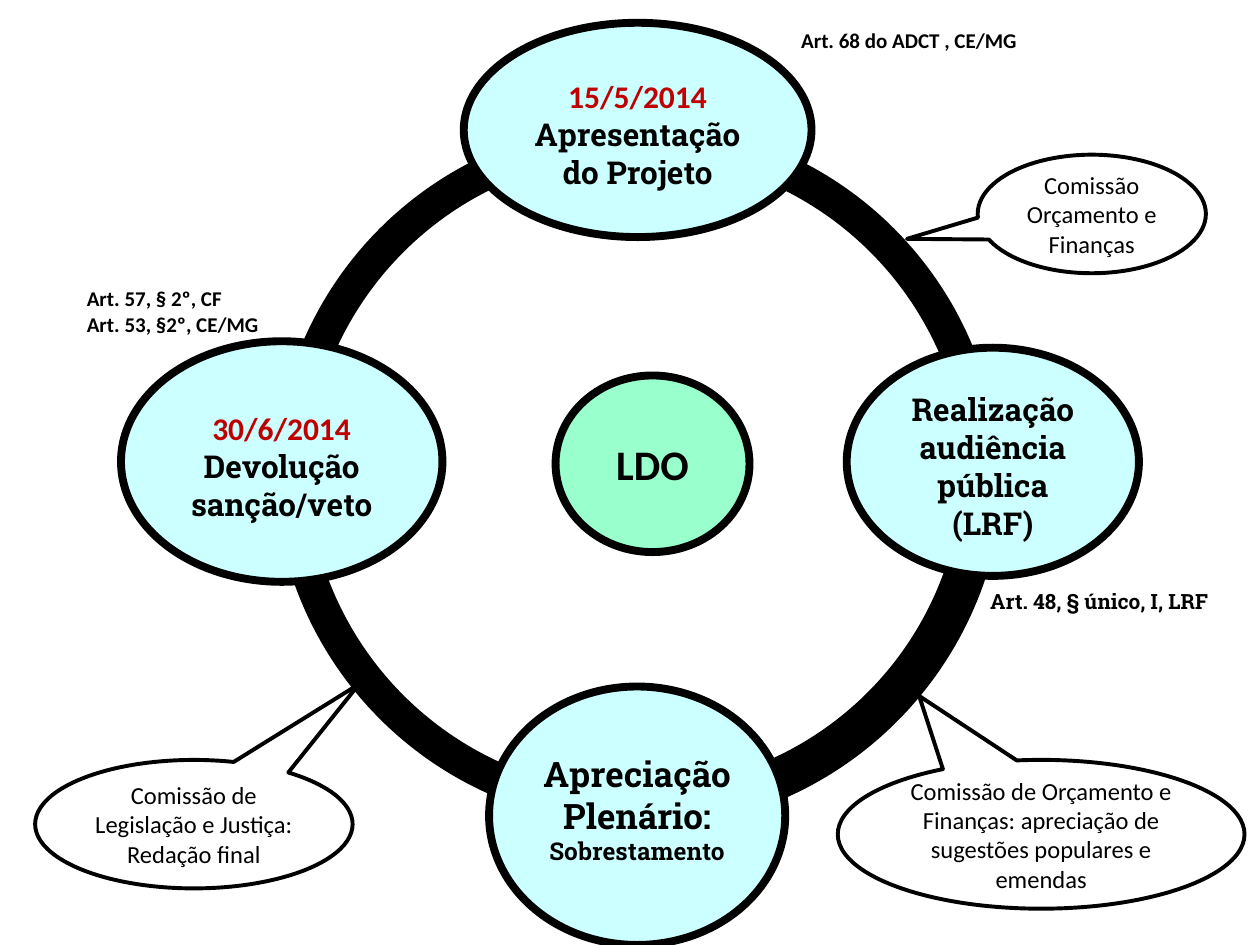
from pptx import Presentation
from pptx.dml.color import RGBColor
from pptx.enum.shapes import MSO_SHAPE as Kind
from pptx.enum.text import MSO_ANCHOR as Anchor, PP_ALIGN as Align
from pptx.util import Cm, Pt

SANS, SLAB = "Calibri", "Roboto Slab"
BLACK, WHITE, RED = "000000", "FFFFFF", "C00000"
AQUA, MINT = "CCFFFF", "99FFCC"


def color(code):
    return RGBColor.from_string(code)


def turn(deg):
    """Convert degrees to the scale of an arc's angle adjustments."""
    return deg * 0.6


class Board:
    """Holds the line style and the slide being drawn."""

    thick, thin = 4.5, 2.25

    def __init__(self, slide):
        self.shapes = slide.shapes

    def shape(self, kind, box, fill, line=None):
        item = self.shapes.add_shape(kind, *map(Cm, box))
        item.shadow.inherit = False
        item.fill.solid()
        item.fill.fore_color.rgb = color(fill)
        if line:
            item.line.color.rgb = color(BLACK)
            item.line.width = Pt(line)
        else:
            item.line.fill.background()
        return item

    def label(self, item, lines, align):
        """Fill a shape with lines of (text, size, font, colour, bold)."""
        frame = item.text_frame
        frame.text = "\n".join(line[0] for line in lines)
        for par, (_, size, face, ink, bold) in zip(frame.paragraphs, lines):
            par.alignment = align
            for run in par.runs:
                font = run.font
                font.size, font.name, font.bold = Pt(size), face, bold
                font.color.rgb = color(ink)

    def arc(self, top, start, end, line=None):
        item = self.shape(Kind.BLOCK_ARC, (5.51, top, 14.66, 14.66), BLACK, line)
        for i, value in enumerate((turn(start), turn(end), 0.046)):
            item.adjustments[i] = value

    def oval(self, box, fill, lines, top=0.08, bottom=0.08):
        item = self.shape(Kind.OVAL, box, fill, self.thick)
        frame = item.text_frame
        frame.margin_left = frame.margin_right = Cm(0.08)
        frame.margin_top, frame.margin_bottom = Cm(top), Cm(bottom)
        frame.vertical_anchor = Anchor.MIDDLE
        self.label(item, lines, Align.CENTER)

    def callout(self, box, tip, *texts):
        item = self.shape(Kind.OVAL_CALLOUT, box, WHITE, self.thin)
        item.adjustments[0], item.adjustments[1] = tip
        item.text_frame.vertical_anchor = Anchor.MIDDLE
        lines = [(text, 14, SANS, BLACK, False) for text in texts]
        self.label(item, lines, Align.CENTER)

    def note(self, box, face, *texts, wrap=False):
        item = self.shapes.add_textbox(*map(Cm, box))
        item.text_frame.word_wrap = wrap
        lines = [(text, 12, face, BLACK, True) for text in texts]
        self.label(item, lines, Align.LEFT)


def date(text):
    return text, 18, SANS, RED, True


def step(text, size=18):
    return text, size, SLAB, BLACK, True


def main():
    deck = Presentation()
    deck.slide_width, deck.slide_height = Cm(25.4), Cm(19.05)
    board = Board(deck.slides.add_slide(deck.slide_layouts[6]))

    # Ring
    board.arc(2.46, 183.83, 270.13)
    board.arc(1.98, 90, 180)
    board.arc(1.98, 0, 90, board.thick)
    board.arc(2.46, 269.87, 356.17)

    # Hub and the four steps
    board.oval((11.2, 7.57, 3.91, 3.56), MINT, [("LDO", 24, SANS, BLACK, True)])
    board.oval((9.35, 0.46, 7.01, 4.32), AQUA,
               [date("15/5/2014"), step("Apresentação"), step("do Projeto")],
               top=0.25)
    board.oval((17.07, 7.01, 5.89, 4.6), AQUA,
               [step("Realização"), step("audiência pública (LRF)")], top=0.25)
    board.oval((9.86, 13.84, 5.97, 5.21), AQUA,
               [step("Apreciação Plenário:", 20), step("Sobrestamento", 14)],
               bottom=0.35)
    board.oval((2.44, 6.88, 6.48, 4.85), AQUA,
               [date("30/6/2014"), step("Devolução"), step("sanção/veto")],
               top=0.25)

    # Legal bases
    board.note((15.9, 0.43, 5.99, 0.76), SANS, "Art. 68 do ADCT , CE/MG", wrap=True)
    board.note((1.5, 5.64, 4.34, 1.27), SANS,
               "Art. 57, § 2º, CF", "Art. 53, §2º, CE/MG")
    board.note((19.71, 11.73, 5.82, 0.76), SLAB, "Art. 48, § único, I, LRF")

    # Committees
    board.callout((0.71, 15.32, 6.4, 2.59), (0.52, -1.09),
                  "Comissão de Legislação e Justiça:", "Redação final")
    board.callout((16.89, 15.32, 8.2, 3), (-0.3, -0.93),
                  "Comissão de Orçamento e Finanças: apreciação de "
                  "sugestões populares e emendas")
    board.callout((19.71, 3.12, 4.6, 2.39), (-0.81, 0.21),
                  "Comissão Orçamento e Finanças")

    deck.save("out.pptx")


if __name__ == "__main__":
    main()
